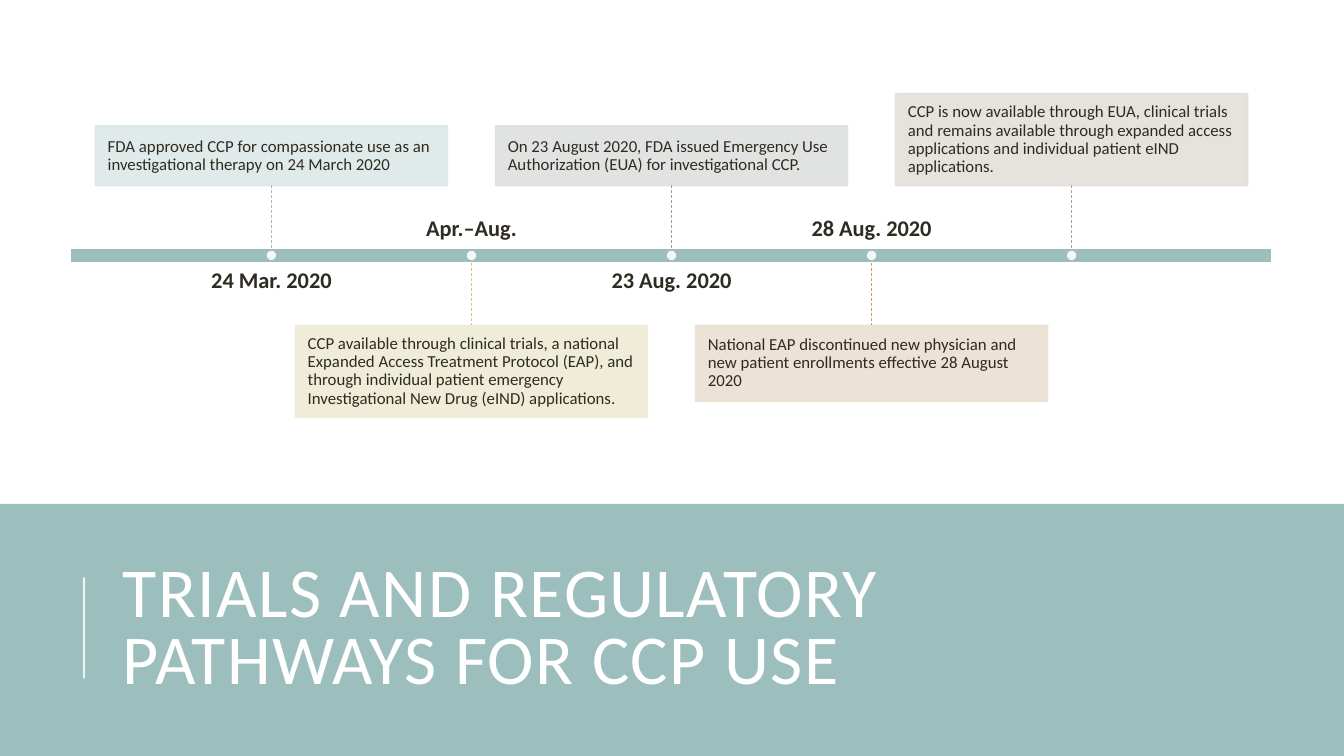
from dataclasses import dataclass
from typing import Optional

import lxml.etree
import pptx
import pptx.dml.color
import pptx.enum.dml
import pptx.enum.shapes
import pptx.enum.text
import pptx.oxml.ns
import pptx.util

Pt = pptx.util.Pt
RGBColor = pptx.dml.color.RGBColor
Shape = pptx.enum.shapes.MSO_SHAPE
Anchor = pptx.enum.text.MSO_ANCHOR
Align = pptx.enum.text.PP_ALIGN
qn = pptx.oxml.ns.qn

FONT = "Calibri"
WHITE = RGBColor(0xFF, 0xFF, 0xFF)
TEAL = RGBColor(0x9C, 0xBE, 0xBD)
INK = RGBColor(0x2E, 0x2B, 0x21)
MIST = RGBColor(0xDE, 0xE8, 0xE8)
CREAM = RGBColor(0xEE, 0xEC, 0xD4)
OLIVE = RGBColor(0xD2, 0xCB, 0x6C)
SILVER = RGBColor(0xDD, 0xE0, 0xDF)
SAGE = RGBColor(0x95, 0xA3, 0x9D)
PEACH = RGBColor(0xEB, 0xDF, 0xD2)
OCHRE = RGBColor(0xC8, 0x9F, 0x5D)
SAND = RGBColor(0xE4, 0xDF, 0xDA)
TAUPE = RGBColor(0xB1, 0xA0, 0x89)

# Timeline geometry, in points
FIRST_CENTER, STEP = 193.9, 142.9
AXIS_LEFT, AXIS_TOP, AXIS_WIDTH, AXIS_HEIGHT = 50.4, 177.2, 858.2, 10.6
AXIS_BOTTOM = AXIS_TOP + AXIS_HEIGHT
STEM, CARD_WIDTH, CARD_INSET = 44.7, 251.3, 8.64
DATE_WIDTH, DATE_HEIGHT, DATE_GAP = 228, 29.5, 4.5
DOT = 6.7


@dataclass(frozen=True)
class Milestone:
    date: str
    text: str
    card_height: float
    card_color: RGBColor
    stem_color: RGBColor
    above: bool


MILESTONES = [
    Milestone("24 Mar. 2020",
              "FDA approved CCP for compassionate use as an investigational therapy on 24 March 2020",
              42.5, MIST, TEAL, True),
    Milestone("Apr.–Aug.",
              "CCP available through clinical trials, a national Expanded Access Treatment Protocol (EAP), "
              "and through individual patient emergency Investigational New Drug (eIND) applications.",
              65.5, CREAM, OLIVE, False),
    Milestone("23 Aug. 2020",
              "On 23 August 2020, FDA issued Emergency Use Authorization (EUA) for investigational CCP.",
              42.5, SILVER, SAGE, True),
    Milestone("28 Aug. 2020",
              "National EAP discontinued new physician and new patient enrollments effective 28 August 2020",
              54, PEACH, OCHRE, False),
    Milestone("",
              "CCP is now available through EUA, clinical trials and remains available through expanded "
              "access applications and individual patient eIND applications.",
              65.5, SAND, TAUPE, True),
]


def set_opacity(part: lxml.etree.ElementBase, percent: int) -> None:
    """Make every solid colour inside a shape's properties translucent."""
    for color in part.iter(qn("a:srgbClr")):
        lxml.etree.SubElement(color, qn("a:alpha")).set("val", str(percent * 1000))


def add_block(slide: pptx.slide.Slide, kind: Shape, left: float, top: float, width: float,
              height: float, fill: RGBColor, border: Optional[RGBColor] = None,
              opacity: int = 100) -> pptx.shapes.autoshape.Shape:
    block = slide.shapes.add_shape(kind, Pt(left), Pt(top), Pt(width), Pt(height))
    block.shadow.inherit = False
    block.fill.solid()
    block.fill.fore_color.rgb = fill
    if border is None:
        block.line.fill.background()
    else:
        block.line.color.rgb = border
        block.line.width = Pt(1.25)
    if opacity < 100:
        set_opacity(block.element.spPr, opacity)
    return block


def add_rule(slide: pptx.slide.Slide, x: float, top: float, bottom: float, color: RGBColor,
             weight: float) -> pptx.shapes.connector.Connector:
    rule = slide.shapes.add_connector(pptx.enum.shapes.MSO_CONNECTOR.STRAIGHT,
                                      Pt(x), Pt(top), Pt(x), Pt(bottom))
    rule.line.color.rgb = color
    rule.line.width = Pt(weight)
    lxml.etree.SubElement(rule.element.spPr, qn("a:effectLst"))
    return rule


def write(frame: pptx.text.text.TextFrame, text: str, size: float, color: RGBColor, align: Align,
          anchor: Anchor, inset: float, spacing: float = 0.9, bold: bool = False) -> None:
    frame.word_wrap = True
    frame.auto_size = pptx.enum.text.MSO_AUTO_SIZE.NONE
    frame.vertical_anchor = anchor
    frame.margin_left = frame.margin_right = frame.margin_top = frame.margin_bottom = Pt(inset)
    paragraph = frame.paragraphs[0]
    paragraph.text = text
    paragraph.alignment = align
    paragraph.line_spacing = spacing
    paragraph.font.name = FONT
    paragraph.font.size = Pt(size)
    paragraph.font.bold = bold
    paragraph.font.color.rgb = color


def add_milestone(slide: pptx.slide.Slide, milestone: Milestone, center: float) -> None:
    # Card and dashed stem
    if milestone.above:
        stem_top, stem_bottom = AXIS_TOP - STEM, AXIS_TOP
        card_top = stem_top - milestone.card_height
    else:
        stem_top, stem_bottom = AXIS_BOTTOM, AXIS_BOTTOM + STEM
        card_top = stem_bottom
    card = add_block(slide, Shape.RECTANGLE, center - CARD_WIDTH / 2, card_top, CARD_WIDTH,
                     milestone.card_height, milestone.card_color, milestone.card_color, 90)
    write(card.text_frame, milestone.text, 12, INK, Align.LEFT, Anchor.MIDDLE, CARD_INSET)
    stem = add_rule(slide, center, stem_top, stem_bottom, milestone.stem_color, 0.5)
    stem.line.dash_style = pptx.enum.dml.MSO_LINE.DASH

    # Dot on the axis
    add_block(slide, Shape.OVAL, center - DOT / 2, AXIS_TOP + (AXIS_HEIGHT - DOT) / 2,
              DOT, DOT, WHITE, opacity=90)

    # Date on the other side of the axis
    if milestone.date:
        date_top = AXIS_BOTTOM + DATE_GAP if milestone.above else AXIS_TOP - DATE_GAP - DATE_HEIGHT
        date = slide.shapes.add_textbox(Pt(center - DATE_WIDTH / 2), Pt(date_top),
                                        Pt(DATE_WIDTH), Pt(DATE_HEIGHT))
        anchor = Anchor.TOP if milestone.above else Anchor.BOTTOM
        write(date.text_frame, milestone.date, 16, INK, Align.CENTER, anchor, 0, bold=True)


def add_title_band(slide: pptx.slide.Slide) -> None:
    add_block(slide, Shape.RECTANGLE, 0, 360, 960, 180, TEAL)
    accent = add_rule(slide, 60, 412.5, 484.5, WHITE, 1.5)
    set_opacity(accent.element.spPr, 80)

    title = slide.shapes.title
    title.left, title.top, title.width, title.height = Pt(80.6), Pt(391.7), Pt(765.4), Pt(118)
    write(title.text_frame, "TRIALS AND REGULATORY PATHWAYS FOR CCP USE", 50, WHITE,
          Align.LEFT, Anchor.MIDDLE, 7.2, spacing=0.8)
    for letters in title.element.iter(qn("a:defRPr")):
        letters.set("spc", "100")
    slide.shapes.element.append(title.element)  # in front of the band


def main() -> None:
    deck = pptx.Presentation()
    deck.slide_width, deck.slide_height = Pt(960), Pt(540)
    slide = deck.slides.add_slide(deck.slide_layouts[5])

    add_title_band(slide)
    add_block(slide, Shape.RECTANGLE, AXIS_LEFT, AXIS_TOP, AXIS_WIDTH, AXIS_HEIGHT, TEAL, WHITE)
    for index, milestone in enumerate(MILESTONES):
        add_milestone(slide, milestone, FIRST_CENTER + index * STEP)

    deck.save("out.pptx")


if __name__ == "__main__":
    main()
